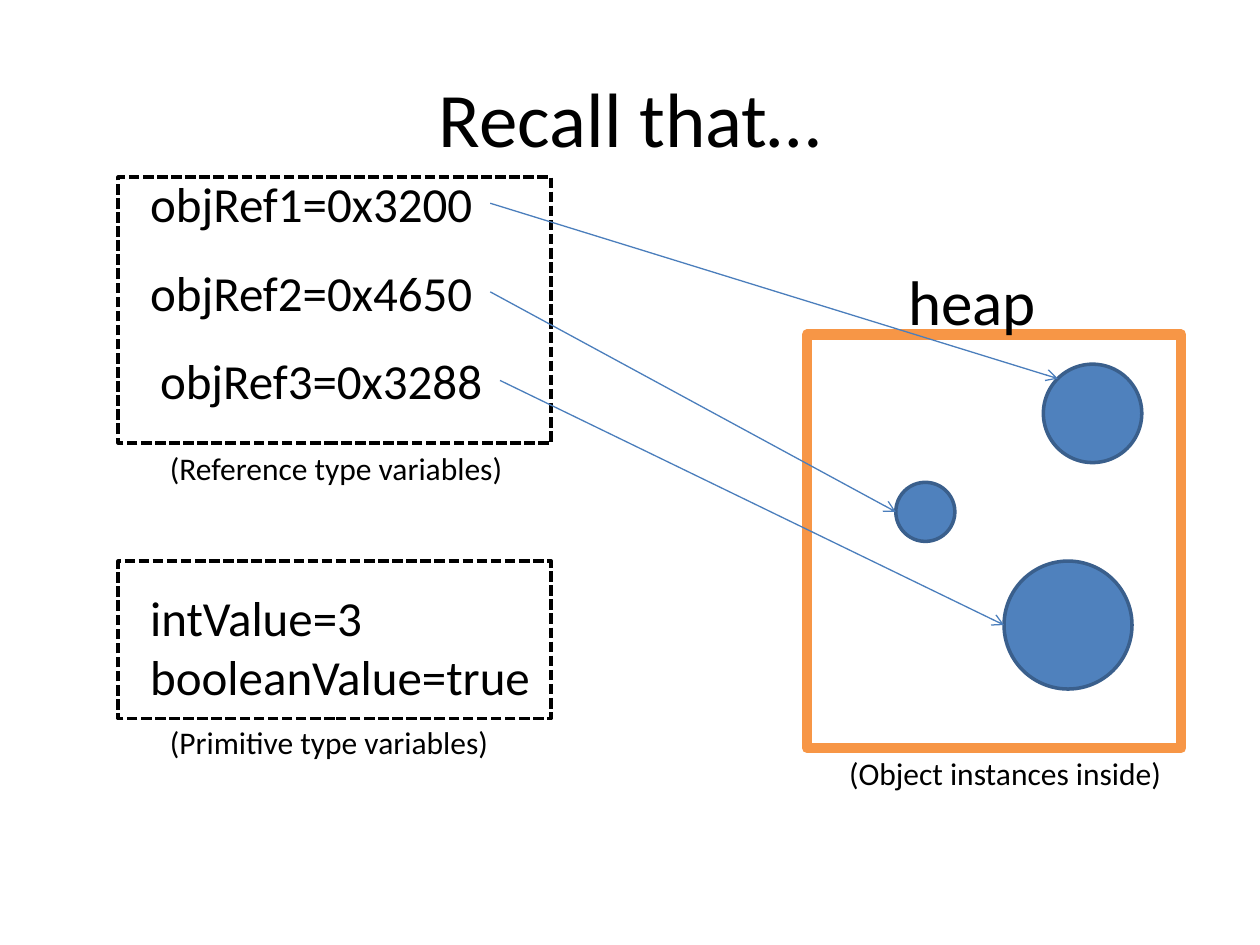
from dataclasses import dataclass
from math import cos, pi, sin

from lxml import etree
from pptx import Presentation
from pptx.dml.color import RGBColor
from pptx.enum.dml import MSO_LINE
from pptx.enum.shapes import MSO_CONNECTOR, MSO_SHAPE
from pptx.enum.text import MSO_ANCHOR, MSO_AUTO_SIZE, PP_ALIGN
from pptx.oxml.ns import qn
from pptx.util import Inches, Pt

RECT, OVAL = MSO_SHAPE.RECTANGLE, MSO_SHAPE.OVAL
STRAIGHT = MSO_CONNECTOR.STRAIGHT
DASH = MSO_LINE.SQUARE_DOT
MIDDLE, CENTER = MSO_ANCHOR.MIDDLE, PP_ALIGN.CENTER
FIT = MSO_AUTO_SIZE.SHAPE_TO_FIT_TEXT
FONT = "Calibri"
BLACK, WHITE, ORANGE = "000000", "FFFFFF", "F79646"
BLUE, DARK_BLUE, ARROW_BLUE = "4F81BD", "3A5F8C", "4B7EBC"
COLS, ROWS = 64, 48
RIGHT_SIDE = 3
LEFT, UPPER_LEFT = pi, 1.25 * pi

prs = Presentation()
prs.slide_width, prs.slide_height = Inches(10), Inches(7.5)
s = prs.slides.add_slide(prs.slide_layouts[5])


@dataclass
class Box:
    """A rectangle in grid columns and rows."""
    col: float
    row: float
    cols: float
    rows: float

    def emu(self) -> tuple:
        """Return left, top, width and height as lengths."""
        cw, rh = prs.slide_width / COLS, prs.slide_height / ROWS
        return (int(self.col * cw), int(self.row * rh),
                int(self.cols * cw), int(self.rows * rh))


@dataclass
class Label:
    """A line of text and where it stands."""
    text: str
    box: Box
    size: int
    wrap: bool = False


@dataclass
class Reference:
    """A reference variable, the object it points at and the angle of contact."""
    label: Label
    instance: Box
    angle: float


def rgb(color: str) -> RGBColor:
    """Turn a hex string into a colour."""
    return RGBColor.from_string(color)


def write(tf, text: str, size: int) -> None:
    """Put one run of text into the first paragraph."""
    r = tf.paragraphs[0].add_run()
    r.text = text
    r.font.name, r.font.size = FONT, Pt(size)
    r.font.color.rgb = rgb(BLACK)


def draw_title(text: str, box: Box) -> None:
    """Place and fill the title placeholder."""
    sp = s.shapes.title
    sp.left, sp.top, sp.width, sp.height = box.emu()
    tf = sp.text_frame
    tf.vertical_anchor = MIDDLE
    tf.paragraphs[0].alignment = CENTER
    write(tf, text, 44)


def draw_label(label: Label):
    """Draw a text box and return it."""
    sp = s.shapes.add_textbox(*label.box.emu())
    tf = sp.text_frame
    tf.word_wrap = label.wrap
    tf.auto_size = FIT
    write(tf, label.text, label.size)
    return sp


def draw_shape(kind, box: Box, line: str, width: float, fill: str = "", dash=None):
    """Draw an outlined shape and return it."""
    sp = s.shapes.add_shape(kind, *box.emu())
    sp.shadow.inherit = False
    if fill:
        sp.fill.solid()
        sp.fill.fore_color.rgb = rgb(fill)
    else:
        sp.fill.background()
    sp.line.color.rgb = rgb(line)
    sp.line.width = Pt(width)
    if dash is not None:
        sp.line.dash_style = dash
    return sp


def draw_arrow(start, target, angle: float) -> None:
    """Draw an arrow from the right side of a box to the rim of a circle."""
    x = target.left + target.width / 2 * (1 + cos(angle))
    y = target.top + target.height / 2 * (1 + sin(angle))
    c = s.shapes.add_connector(STRAIGHT, 0, 0, int(x), int(y))
    c.begin_connect(start, RIGHT_SIDE)
    c.line.color.rgb = rgb(ARROW_BLUE)
    c.line.width = Pt(0.75)
    etree.SubElement(c.line._get_or_add_ln(), qn("a:tailEnd"), type="arrow")
    etree.SubElement(c._element.spPr, qn("a:effectLst"))


def variable(text: str, col: float, row: float, cols: float) -> Label:
    """Describe a variable in the large text size."""
    return Label(text, Box(col, row, cols, 3.65), 28)


def caption(text: str, col: float, row: float, cols: float) -> Label:
    """Describe a caption in the small text size."""
    return Label(text, Box(col, row, cols, 2.6), 18)


HEAP = Box(41, 17, 19, 21)
FRAMES = [Box(6, 9, 22, 13.5), Box(6, 28.5, 22, 8)]
REFERENCES = [
    Reference(variable("objRef1=0x3200", 7, 8.5, 17.9), Box(53, 18.5, 5, 5), UPPER_LEFT),
    Reference(variable("objRef2=0x4650", 7, 13, 17.9), Box(45.5, 24.5, 3, 3), LEFT),
    Reference(variable("objRef3=0x3288", 7.5, 17.5, 17.9), Box(51, 28.5, 6.5, 6.5), LEFT),
]
LABELS = [
    Label("heap", Box(45.5, 13, 9, 4.55), 36, True),
    variable("intValue=3", 7, 29.5, 12.2),
    variable("booleanValue=true", 7, 32.5, 20.8),
    caption("(Reference type variables)", 8, 22.5, 19),
    caption("(Primitive type variables)", 8, 36.4, 17.7),
    caption("(Object instances inside)", 42.5, 38, 17.35),
]

draw_title("Recall that…", Box(3.2, 1.92, 57.6, 8))
draw_shape(RECT, HEAP, ORANGE, 6, WHITE)
for frame in FRAMES:
    draw_shape(RECT, frame, BLACK, 2, dash=DASH)
for label in LABELS:
    draw_label(label)
for ref in REFERENCES:
    circle = draw_shape(OVAL, ref.instance, DARK_BLUE, 2, BLUE)
    draw_arrow(draw_label(ref.label), circle, ref.angle)

prs.save("out.pptx")
